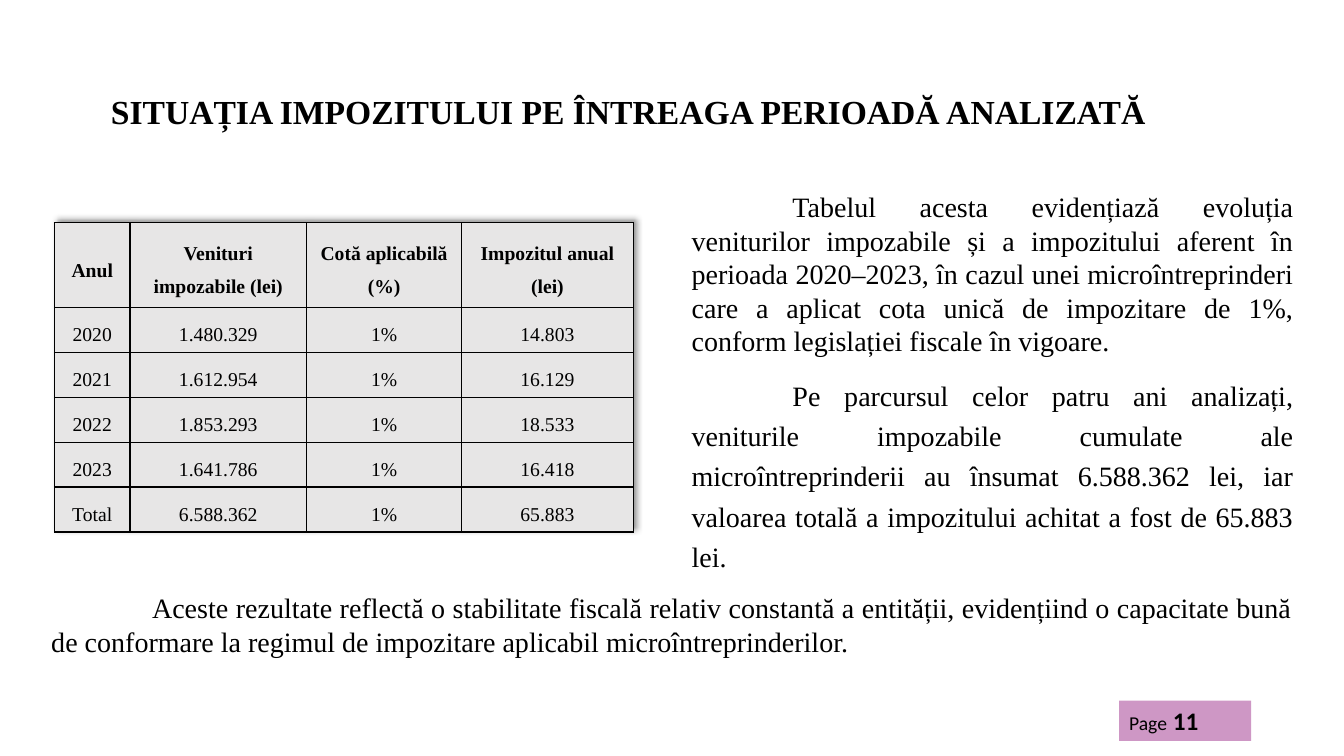
from dataclasses import dataclass

from lxml import etree
from pptx import Presentation
from pptx.dml.color import RGBColor
from pptx.enum.shapes import MSO_SHAPE
from pptx.enum.text import MSO_ANCHOR, MSO_AUTO_SIZE, PP_ALIGN
from pptx.oxml.ns import qn
from pptx.util import Inches, Pt

LEFT, CENTER, JUSTIFY = PP_ALIGN.LEFT, PP_ALIGN.CENTER, PP_ALIGN.JUSTIFY
TOP, MIDDLE = MSO_ANCHOR.TOP, MSO_ANCHOR.MIDDLE

# Content
TITLE = "SITUAȚIA IMPOZITULUI PE ÎNTREAGA PERIOADĂ ANALIZATĂ"
TAX_TABLE = [
    ("Anul", "Venituri impozabile (lei)", "Cotă aplicabilă (%)", "Impozitul anual (lei)"),
    ("2020", "1.480.329", "1%", "14.803"),
    ("2021", "1.612.954", "1%", "16.129"),
    ("2022", "1.853.293", "1%", "18.533"),
    ("2023", "1.641.786", "1%", "16.418"),
    ("Total", "6.588.362", "1%", "65.883"),
]
# Each paragraph: text, line spacing, space before in points
COMMENTARY = [
    ("Tabelul acesta evidențiază evoluția veniturilor impozabile și a impozitului "
     "aferent în perioada 2020–2023, în cazul unei microîntreprinderi care a aplicat "
     "cota unică de impozitare de 1%, conform legislației fiscale în vigoare.", 1.0, 0),
    ("Pe parcursul celor patru ani analizați, veniturile impozabile cumulate ale "
     "microîntreprinderii au însumat 6.588.362 lei, iar valoarea totală a impozitului "
     "achitat a fost de 65.883 lei.", 1.2, 10),
]
CONCLUSION = [
    ("Aceste rezultate reflectă o stabilitate fiscală relativ constantă a entității, "
     "evidențiind o capacitate bună de conformare la regimul de impozitare aplicabil "
     "microîntreprinderilor.", 1.0, 0),
]
PAGE_LABEL, PAGE_NUMBER = "Page", " 11"


@dataclass(frozen=True)
class Theme:
    serif: str = "Times New Roman"
    sans: str = "Calibri"
    ink: str = "000000"
    cell: str = "E7E6E6"
    badge: str = "9F318D"
    title_size: int = 24
    text_size: int = 20
    table_size: int = 14
    label_size: int = 14
    number_size: int = 18


THEME = Theme()

# Layout, in inches
SLIDE_SIZE = (13.33, 7.5)
TITLE_BOX = (1, 0.66, 11.5, 0.94)
COMMENTARY_BOX = (6.76, 1.83, 6.17, 3.89)
CONCLUSION_BOX = (0.41, 5.81, 12.51, 0.77)
BADGE_BOX = (11.1, 6.95, 1.31, 0.4)
TABLE_ORIGIN = (0.54, 2.21)
COLUMN_WIDTHS = (0.75, 1.75, 1.54, 1.7)
HEADER_HEIGHT, ROW_HEIGHT = 0.84, 0.446
FIRST_LINE_INDENT = 1


def inches(values):
    return [Inches(value) for value in values]


def place(shape, box):
    shape.left, shape.top, shape.width, shape.height = inches(box)


def style_run(run, size, font=THEME.serif, bold=False):
    run.font.name, run.font.size, run.font.bold = font, Pt(size), bold
    run.font.color.rgb = RGBColor.from_string(THEME.ink)


def fill_prose(text_frame, paragraphs):
    text_frame.word_wrap = True
    text_frame.auto_size = MSO_AUTO_SIZE.NONE
    text_frame.vertical_anchor = TOP
    text_frame.text = "\n".join(text for text, _, _ in paragraphs)
    for paragraph, (_, spacing, before) in zip(text_frame.paragraphs, paragraphs):
        properties = paragraph._p.get_or_add_pPr()
        properties.set("marL", "0")
        properties.set("indent", str(Inches(FIRST_LINE_INDENT)))
        etree.SubElement(properties, qn("a:buNone"))
        paragraph.alignment = JUSTIFY
        paragraph.line_spacing = spacing
        paragraph.space_before = Pt(before)
        style_run(paragraph.runs[0], THEME.text_size)


def add_color(parent, color, alpha=None):
    solid = etree.SubElement(parent, qn("a:srgbClr"), val=color)
    if alpha is not None:
        etree.SubElement(solid, qn("a:alpha"), val=str(alpha * 1000))


def add_borders(cell):
    properties = cell._tc.get_or_add_tcPr()
    for index, side in enumerate(("lnL", "lnR", "lnT", "lnB")):
        line = etree.Element(qn(f"a:{side}"), w=str(Pt(1)))
        add_color(etree.SubElement(line, qn("a:solidFill")), THEME.ink)
        properties.insert(index, line)


def add_table_shadow(table):
    effects = etree.Element(qn("a:effectLst"))
    shadow = etree.SubElement(effects, qn("a:outerShdw"), blurRad=str(Pt(4)),
                              dist=str(Pt(3)), dir="18900000", algn="bl", rotWithShape="0")
    add_color(shadow, THEME.ink, 40)
    table._tbl.tblPr.insert(0, effects)


def fill_cell(cell, text, bold):
    cell.margin_left = cell.margin_right = Inches(0.07)
    cell.margin_top = cell.margin_bottom = 0
    cell.vertical_anchor = MIDDLE
    cell.fill.solid()
    cell.fill.fore_color.rgb = RGBColor.from_string(THEME.cell)
    add_borders(cell)
    cell.text = text
    paragraph = cell.text_frame.paragraphs[0]
    paragraph.alignment = CENTER
    paragraph.line_spacing = 1.5
    paragraph.space_after = Pt(4)
    style_run(paragraph.runs[0], THEME.table_size, bold=bold)


def add_tax_table(slide):
    heights = [HEADER_HEIGHT] + [ROW_HEIGHT] * (len(TAX_TABLE) - 1)
    box = inches((*TABLE_ORIGIN, sum(COLUMN_WIDTHS), sum(heights)))
    table = slide.shapes.add_table(len(heights), len(COLUMN_WIDTHS), *box).table
    for column, width in zip(table.columns, COLUMN_WIDTHS):
        column.width = Inches(width)
    for row, height, texts in zip(table.rows, heights, TAX_TABLE):
        row.height = Inches(height)
        for cell, text in zip(row.cells, texts):
            fill_cell(cell, text, bold=texts is TAX_TABLE[0])
    add_table_shadow(table)


def add_page_badge(slide):
    badge = slide.shapes.add_shape(MSO_SHAPE.RECTANGLE, *inches(BADGE_BOX))
    badge.shadow.inherit = False
    badge.line.fill.background()
    badge.fill.solid()
    badge.fill.fore_color.rgb = RGBColor.from_string(THEME.badge)
    color = badge.fill._xPr.find(qn("a:solidFill"))[0]
    etree.SubElement(color, qn("a:alpha"), val="50000")
    badge.text_frame.vertical_anchor = TOP
    paragraph = badge.text_frame.paragraphs[0]
    paragraph.alignment = LEFT
    for text, size, bold in ((PAGE_LABEL, THEME.label_size, False),
                             (PAGE_NUMBER, THEME.number_size, True)):
        run = paragraph.add_run()
        run.text = text
        style_run(run, size, THEME.sans, bold)


def main():
    presentation = Presentation()
    presentation.slide_width, presentation.slide_height = inches(SLIDE_SIZE)
    slide = presentation.slides.add_slide(presentation.slide_layouts[1])

    # Title
    title = slide.shapes.title
    place(title, TITLE_BOX)
    title.text_frame.text = TITLE
    title.text_frame.auto_size = MSO_AUTO_SIZE.NONE
    title.text_frame.vertical_anchor = MIDDLE
    heading = title.text_frame.paragraphs[0]
    heading.alignment = LEFT
    heading.line_spacing = 0.9
    style_run(heading.runs[0], THEME.title_size, bold=True)

    # Table, commentary, page badge and conclusion
    add_tax_table(slide)
    commentary = slide.placeholders[1]
    place(commentary, COMMENTARY_BOX)
    fill_prose(commentary.text_frame, COMMENTARY)
    add_page_badge(slide)
    conclusion = slide.shapes.add_textbox(*inches(CONCLUSION_BOX))
    fill_prose(conclusion.text_frame, CONCLUSION)

    presentation.save("out.pptx")


if __name__ == "__main__":
    main()
